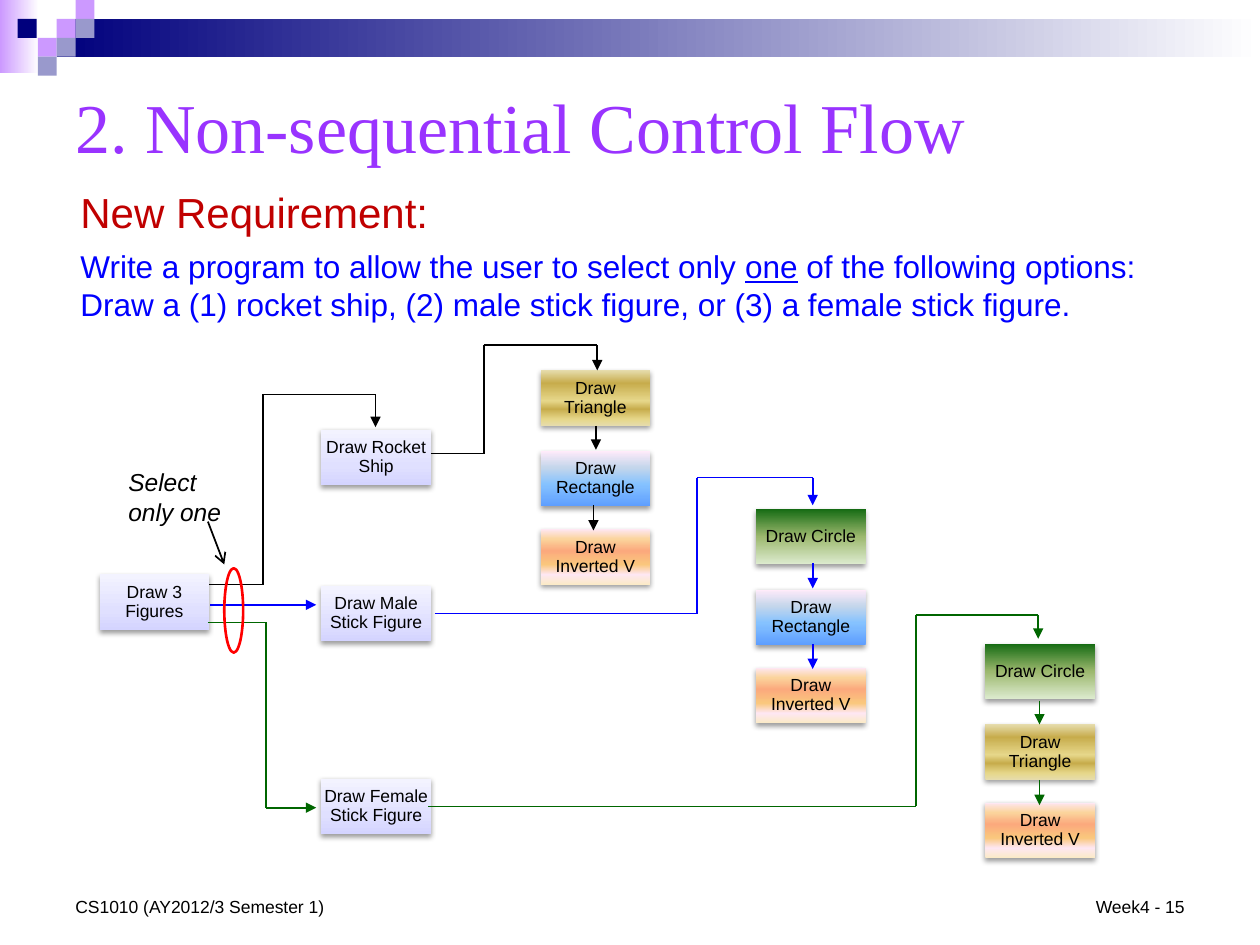
"""Build the control flow slide with three branching drawing options."""
import itertools

import lxml.etree
import pptx
import pptx.dml.color
import pptx.enum.shapes
import pptx.enum.text
import pptx.oxml.ns
import pptx.util

Inches = pptx.util.Inches
Pt = pptx.util.Pt
RGBColor = pptx.dml.color.RGBColor
SHAPE = pptx.enum.shapes.MSO_SHAPE
ANCHOR = pptx.enum.text.MSO_ANCHOR
ALIGN = pptx.enum.text.PP_ALIGN
qn = pptx.oxml.ns.qn

BLACK = RGBColor(0x00, 0x00, 0x00)
BLUE = RGBColor(0x00, 0x00, 0xFF)
GREEN = RGBColor(0x00, 0x66, 0x00)
RED = RGBColor(0xFF, 0x00, 0x00)
DARK_RED = RGBColor(0xC0, 0x00, 0x00)
PURPLE = RGBColor(0x99, 0x33, 0xFF)
NAVY = RGBColor(0x00, 0x00, 0x7D)
LILAC = RGBColor(0xCC, 0x99, 0xFF)
SLATE = RGBColor(0x99, 0x99, 0xCC)
WHITE = RGBColor(0xFF, 0xFF, 0xFF)

GOLD_STOPS = [(0, "E6DCAC"), (12, "E6D78A"), (30, "C7AC4C"),
              (45, "E6D78A"), (77, "C7AC4C"), (100, "E6DCAC")]
SKY_STOPS = [(0, "5E9EFF"), (40, "85C2FF"), (70, "C4D6EB"), (100, "FFEBFA")]
PEACH_STOPS = [(0, "FBEAC7"), (18, "FEE7F2"), (36, "FAC77D"),
               (61, "FBA97D"), (82, "FBD49C"), (100, "FEE7F2")]
LEAF_STOPS = [(0, "DDEBCF"), (50, "9CB86E"), (100, "156B13")]
LAVENDER_STOPS = [(0, "D4D4FF"), (35, "E0E0FF"), (100, "F3F3FF")]

BANNERS = [((0, 0, 0.31, 0.58), LILAC), ((0.45, 0.15, 9.55, 0.3), NAVY)]
SQUARE = 0.15
SQUARES = [(0.45, 0.15, LILAC), (0.6, 0, LILAC), (0.6, 0.15, SLATE),
           (0.3, 0.3, LILAC), (0.14, 0.15, NAVY), (0.45, 0.3, SLATE),
           (0.3, 0.45, SLATE)]

TRIANGLE = ("Draw Triangle", GOLD_STOPS)
RECTANGLE = ("Draw Rectangle", SKY_STOPS)
INVERTED_V = ("Draw Inverted V", PEACH_STOPS)
CIRCLE = ("Draw Circle", LEAF_STOPS)

BOX_WIDTH, BOX_HEIGHT = 0.87, 0.44
STEP_OFFSETS = (0, 0.64, 1.26)
STEP_COLUMNS = [
    (4.29, 2.94, (TRIANGLE, RECTANGLE, INVERTED_V)),
    (6, 4.04, (CIRCLE, RECTANGLE, INVERTED_V)),
    (7.82, 5.11, (CIRCLE, TRIANGLE, INVERTED_V)),
]
TASKS = [("Draw 3 Figures", 0.79, 4.56), ("Draw Rocket Ship", 2.55, 3.41),
         ("Draw Male Stick Figure", 2.55, 4.65),
         ("Draw Female Stick Figure", 2.55, 6.18)]

ROUTES = [
    (BLACK, [(1.66, 4.64), (2.09, 4.64), (2.09, 3.13), (2.98, 3.13), (2.98, 3.39)]),
    (BLACK, [(3.42, 3.6), (3.84, 3.6), (3.84, 2.74), (4.74, 2.74), (4.74, 2.94)]),
    (BLACK, [(4.73, 3.38), (4.73, 3.57)]),
    (BLACK, [(4.71, 4.01), (4.71, 4.21)]),
    (BLUE, [(1.67, 4.8), (2.51, 4.8)]),
    (BLUE, [(3.45, 4.87), (5.53, 4.87), (5.53, 3.79), (6.45, 3.79), (6.45, 4.01)]),
    (BLUE, [(6.45, 4.47), (6.45, 4.67)]),
    (BLUE, [(6.45, 5.11), (6.45, 5.31)]),
    (GREEN, [(1.65, 4.94), (2.11, 4.94), (2.11, 6.41), (2.51, 6.41)]),
    (GREEN, [(3.4, 6.4), (7.27, 6.4), (7.27, 4.88), (8.24, 4.88), (8.24, 5.07)]),
    (GREEN, [(8.25, 5.56), (8.25, 5.75)]),
    (GREEN, [(8.25, 6.19), (8.25, 6.39)]),
]

REQUIREMENT = [
    [("New Requirement:", 24, DARK_RED, False)],
    [("Write a program to allow the user to select only ", 18, BLUE, False),
     ("one", 18, BLUE, True),
     (" of the following options:", 18, BLUE, False)],
    [("Draw a (1) rocket ship, (2) male stick figure, or (3) a female stick figure.",
      18, BLUE, False)],
]


def style_font(font, size, color, name="Arial"):
    font.name, font.size = name, Pt(size)
    font.color.rgb = color


def add_plain_shape(slide, kind, box):
    shape = slide.shapes.add_shape(kind, *map(Inches, box))
    shape.shadow.inherit = False
    shape.line.fill.background()
    return shape


def fill_gradient(shape, stops, angle):
    shape.fill.gradient()
    shape.fill.gradient_angle = angle
    stop_list = shape.element.spPr.find(qn("a:gradFill")).find(qn("a:gsLst"))
    for stop in list(stop_list):
        stop_list.remove(stop)
    for position, color in stops:
        stop = lxml.etree.SubElement(stop_list, qn("a:gs"), pos=str(position * 1000))
        lxml.etree.SubElement(stop, qn("a:srgbClr"), val=str(color))


def add_drop_shadow(shape):
    effects = shape.element.spPr.find(qn("a:effectLst"))
    shadow = lxml.etree.SubElement(
        effects, qn("a:outerShdw"), blurRad=str(Pt(3.1)), dist=str(Pt(1.6)),
        dir="5400000", rotWithShape="0")
    color = lxml.etree.SubElement(shadow, qn("a:srgbClr"), val=str(BLACK))
    lxml.etree.SubElement(color, qn("a:alpha"), val="38000")


def add_box(slide, label, left, top, stops):
    shape = add_plain_shape(slide, SHAPE.RECTANGLE, (left, top, BOX_WIDTH, BOX_HEIGHT))
    fill_gradient(shape, stops, 90)
    add_drop_shadow(shape)
    frame = shape.text_frame
    frame.text = label
    frame.word_wrap = True
    frame.vertical_anchor = ANCHOR.MIDDLE
    frame.margin_left = frame.margin_right = Inches(0.01)
    frame.margin_top = frame.margin_bottom = Inches(0.01)
    paragraph = frame.paragraphs[0]
    paragraph.alignment = ALIGN.CENTER
    paragraph.line_spacing = 0.9
    style_font(paragraph.runs[0].font, 10, BLACK)


def add_line(slide, start, end, color, head=None):
    line = slide.shapes.add_connector(
        pptx.enum.shapes.MSO_CONNECTOR.STRAIGHT, *map(Inches, start + end))
    line.line.color.rgb = color
    line.line.width = Pt(1)
    if head:
        lxml.etree.SubElement(line.line._get_or_add_ln(), qn("a:tailEnd"), type=head)
    lxml.etree.SubElement(line.element.spPr, qn("a:effectLst"))


def add_route(slide, color, points):
    for start, end in itertools.pairwise(points):
        add_line(slide, start, end, color, "triangle" if end == points[-1] else None)


def add_text(slide, box, text, size, color, name="Arial",
             anchor=ANCHOR.TOP, alignment=ALIGN.LEFT):
    frame = slide.shapes.add_textbox(*map(Inches, box)).text_frame
    frame.word_wrap = True
    frame.vertical_anchor = anchor
    frame.text = text
    paragraph = frame.paragraphs[0]
    paragraph.alignment = alignment
    style_font(paragraph.runs[0].font, size, color, name)
    return paragraph.runs[0].font


def add_requirement(slide):
    frame = slide.shapes.add_textbox(*map(Inches, (0.54, 1.43, 8.93, 1.19))).text_frame
    frame.word_wrap = True
    for index, pieces in enumerate(REQUIREMENT):
        paragraph = frame.add_paragraph() if index else frame.paragraphs[0]
        for text, size, color, underline in pieces:
            run = paragraph.add_run()
            run.text = text
            style_font(run.font, size, color)
            run.font.underline = underline
    frame.paragraphs[0].space_after = Pt(6)


def main():
    presentation = pptx.Presentation()
    presentation.slide_width, presentation.slide_height = Inches(10), Inches(7.5)
    slide = presentation.slides.add_slide(presentation.slide_layouts[6])
    for box, color in BANNERS:
        fill_gradient(add_plain_shape(slide, SHAPE.RECTANGLE, box),
                      [(0, color), (100, WHITE)], 0)
    for left, top, color in SQUARES:
        square = add_plain_shape(slide, SHAPE.RECTANGLE, (left, top, SQUARE, SQUARE))
        square.fill.solid()
        square.fill.fore_color.rgb = color
    add_text(slide, (0.5, 0.5, 9, 1), "2. Non-sequential Control Flow", 40, PURPLE,
             "Times New Roman", ANCHOR.MIDDLE)
    add_requirement(slide)
    add_text(slide, (7.17, 6.83, 2.33, 0.5), "Week4 - 15", 10, BLACK,
             anchor=ANCHOR.BOTTOM, alignment=ALIGN.RIGHT)
    add_text(slide, (0.5, 6.83, 3.17, 0.5), "CS1010 (AY2012/3 Semester 1)", 10, BLACK,
             anchor=ANCHOR.BOTTOM)
    for left, top, steps in STEP_COLUMNS:
        for offset, (label, stops) in zip(STEP_OFFSETS, steps):
            add_box(slide, label, left, top + offset, stops)
    for label, left, top in TASKS:
        add_box(slide, label, left, top, LAVENDER_STOPS)
    for color, points in ROUTES:
        add_route(slide, color, points)
    ring = add_plain_shape(slide, SHAPE.OVAL, (1.78, 4.51, 0.15, 0.67))
    ring.fill.background()
    ring.line.color.rgb = RED
    ring.line.width = Pt(1.5)
    add_text(slide, (0.92, 3.66, 1.08, 0.57), "Select only one", 14, BLACK).italic = True
    add_line(slide, (1.65, 4.14), (1.78, 4.48), BLACK, "arrow")
    presentation.save("out.pptx")


if __name__ == "__main__":
    main()
